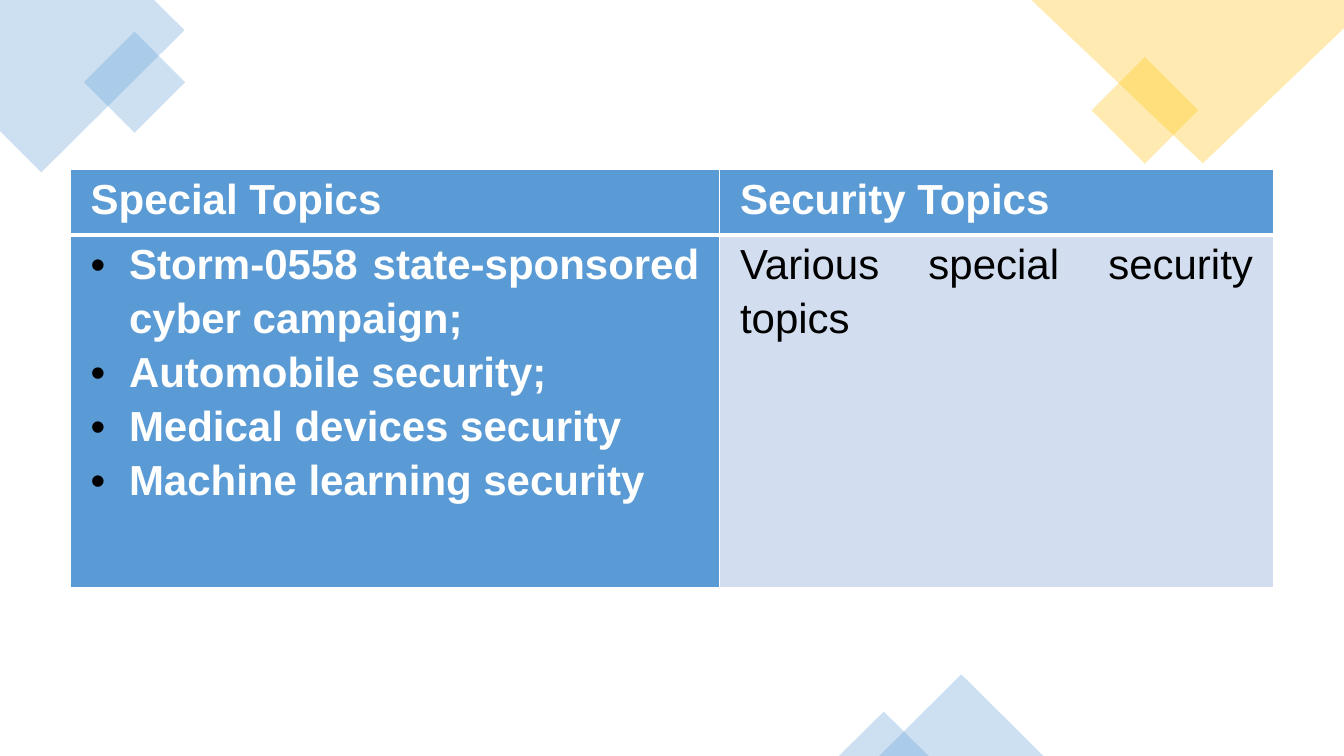
from dataclasses import dataclass

from lxml import etree
from pptx import Presentation
from pptx.dml.color import RGBColor
from pptx.enum.shapes import MSO_SHAPE
from pptx.enum.text import PP_ALIGN
from pptx.oxml.ns import qn
from pptx.util import Pt

PX = 9144  # EMU in one px, 100 px to the inch
RECTANGLE = MSO_SHAPE.RECTANGLE
TRIANGLE = MSO_SHAPE.ISOSCELES_TRIANGLE
JUSTIFY = PP_ALIGN.JUSTIFY

BLUE, PALE_BLUE, GOLD = "5B9BD5", "D2DEEF", "FFC000"
WHITE, BLACK = "FFFFFF", "000000"
OPACITY = 30
BULLET_INDENT = 38


@dataclass(frozen=True)
class Ornament:
    kind: MSO_SHAPE
    left: int
    top: int
    width: int
    height: int
    color: str
    rotation: int = 0


@dataclass(frozen=True)
class Corner:
    points: tuple[tuple[int, int], ...]
    color: str


@dataclass(frozen=True)
class CellText:
    lines: tuple[str, ...]
    fill: str
    color: str = WHITE
    bold: bool = True
    bulleted: bool = False


DECORATIONS = (
    Corner(((153, 0), (0, 0), (0, 130), (41, 171), (183, 30)), BLUE),
    Ornament(RECTANGLE, 98, 46, 71, 71, BLUE, 315),
    Ornament(RECTANGLE, 1098, 72, 75, 75, GOLD, 315),
    Corner(((1333, 0), (1023, 0), (1193, 162), (1333, 28)), GOLD),
    Ornament(TRIANGLE, 872, 669, 163, 81, BLUE),
    Ornament(TRIANGLE, 832, 706, 89, 44, BLUE),
)

COLUMN_WIDTHS = (644, 549)
ROW_HEIGHTS = (65, 350)
TOPICS = (
    "Storm-0558 state-sponsored cyber campaign;",
    "Automobile security;",
    "Medical devices security",
    "Machine learning security",
)
ROWS = (
    (CellText(("Special Topics",), BLUE), CellText(("Security Topics",), BLUE)),
    (
        CellText(TOPICS, BLUE, bulleted=True),
        CellText(("Various special security topics",), PALE_BLUE, BLACK, bold=False),
    ),
)
# Border widths in points; the rule between header and body is the thick one
ROW_BORDERS = (
    {"lnL": 1, "lnR": 1, "lnT": 1, "lnB": 3},
    {"lnL": 1, "lnR": 1, "lnT": 3, "lnB": 1},
)


def set_fill(target, color: str) -> None:
    target.fill.solid()
    target.fill.fore_color.rgb = RGBColor.from_string(color)


def add_child(parent, tag: str, **attributes: str):
    return etree.SubElement(parent, qn(f"a:{tag}"), attributes)


def style_decoration(shape, color: str) -> None:
    shape.shadow.inherit = False
    shape.line.fill.background()
    set_fill(shape, color)
    for tint in shape.fill._xPr.iter(qn("a:srgbClr")):
        add_child(tint, "alpha", val=str(OPACITY * 1000))


def draw_decoration(page, item: Ornament | Corner) -> None:
    if isinstance(item, Corner):
        builder = page.shapes.build_freeform(*item.points[0], scale=PX)
        builder.add_line_segments(item.points[1:], close=True)
        shape = builder.convert_to_shape()
    else:
        frame = (item.left, item.top, item.width, item.height)
        shape = page.shapes.add_shape(item.kind, *(value * PX for value in frame))
        shape.rotation = item.rotation
    style_decoration(shape, item.color)


def add_borders(cell, widths: dict[str, int]) -> None:
    properties = cell._tc.get_or_add_tcPr()
    for side, width in widths.items():
        border = add_child(properties, side, w=str(Pt(width)))
        add_child(add_child(border, "solidFill"), "srgbClr", val=WHITE)


def add_bullet(para) -> None:
    properties = para._p.get_or_add_pPr()
    indent = BULLET_INDENT * PX
    properties.set("marL", str(indent))
    properties.set("indent", str(-indent))
    add_child(add_child(properties, "buClr"), "srgbClr", val=BLACK)
    add_child(properties, "buFont", typeface="Arial")
    add_child(properties, "buChar", char="•")


def fill_cell(cell, content: CellText, borders: dict[str, int]) -> None:
    margins = {"margin_left": 20, "margin_right": 20, "margin_top": 0, "margin_bottom": 0}
    for name, value in margins.items():
        setattr(cell, name, value * PX)
    add_borders(cell, borders)
    set_fill(cell, content.fill)
    font_format = {"name": "Arial", "size": Pt(30), "bold": content.bold}
    for index, line in enumerate(content.lines):
        para = cell.text_frame.paragraphs[0] if index == 0 else cell.text_frame.add_paragraph()
        last = index == len(content.lines) - 1
        para_format = {
            "alignment": JUSTIFY,
            "line_spacing": 1.15,
            "space_before": Pt(0),
            "space_after": Pt(10 if last else 0),
        }
        for name, value in para_format.items():
            setattr(para, name, value)
        if content.bulleted:
            add_bullet(para)
        span = para.add_run()
        span.text = line
        for name, value in font_format.items():
            setattr(span.font, name, value)
        span.font.color.rgb = RGBColor.from_string(content.color)


def draw_topics_table(page) -> None:
    frame = (70, 168, sum(COLUMN_WIDTHS), sum(ROW_HEIGHTS))
    table = page.shapes.add_table(
        len(ROWS), len(COLUMN_WIDTHS), *(value * PX for value in frame)
    ).table
    table.horz_banding = False
    for column, width in zip(table.columns, COLUMN_WIDTHS):
        column.width = width * PX
    for row, height, contents, borders in zip(table.rows, ROW_HEIGHTS, ROWS, ROW_BORDERS):
        row.height = height * PX
        for cell, content in zip(row.cells, contents):
            fill_cell(cell, content, borders)


def main() -> None:
    deck = Presentation()
    deck.slide_width, deck.slide_height = 1333 * PX, 750 * PX
    page = deck.slides.add_slide(deck.slide_layouts[6])
    for item in DECORATIONS:
        draw_decoration(page, item)
    draw_topics_table(page)
    deck.save("out.pptx")


if __name__ == "__main__":
    main()
